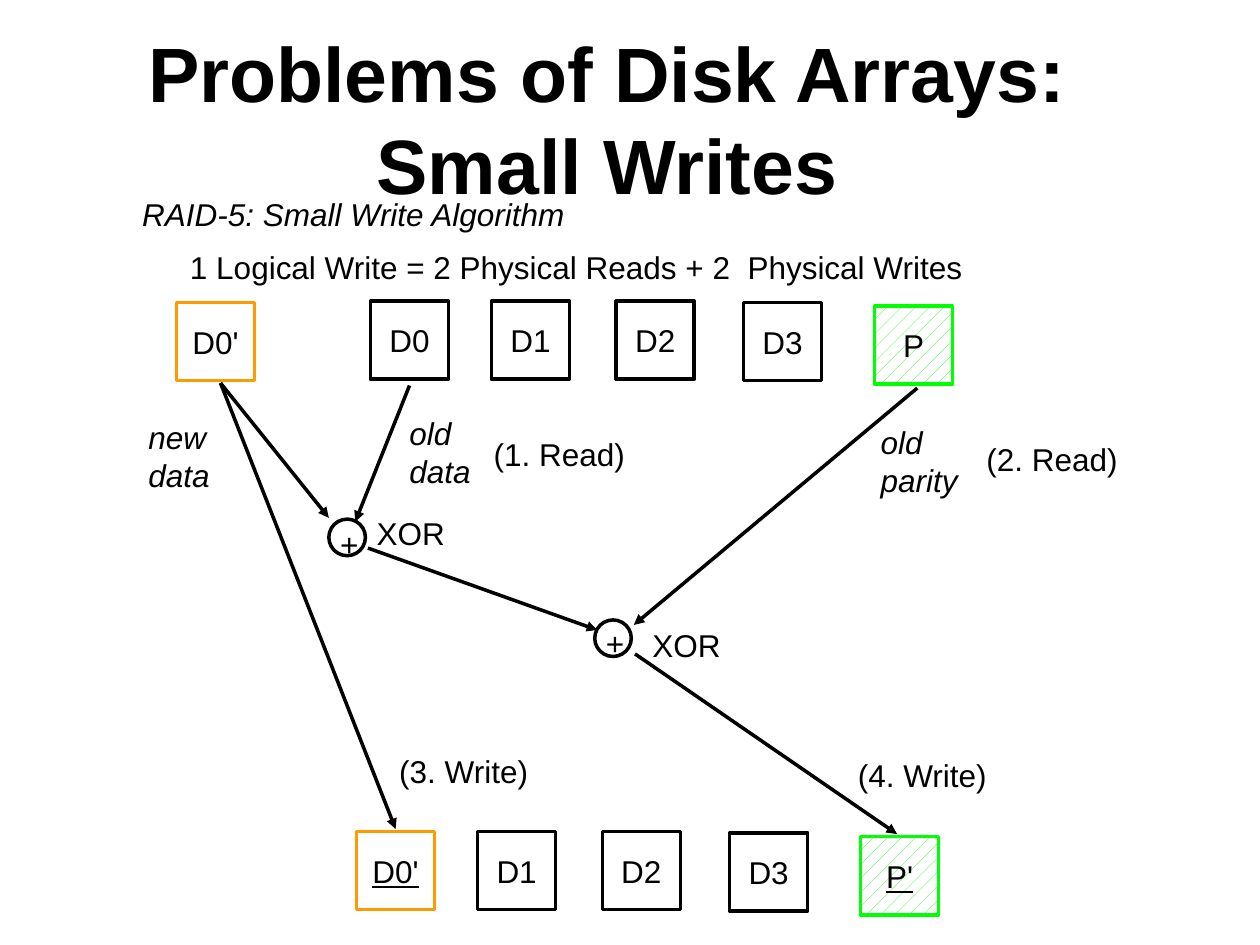
from dataclasses import dataclass
from lxml import etree
from pptx import Presentation
from pptx.dml.color import RGBColor
from pptx.enum.dml import MSO_PATTERN
from pptx.enum.shapes import MSO_CONNECTOR, MSO_SHAPE
from pptx.enum.text import MSO_ANCHOR, MSO_AUTO_SIZE, PP_ALIGN
from pptx.oxml.ns import qn
from pptx.util import Inches, Pt

RECT, OVAL = MSO_SHAPE.RECTANGLE, MSO_SHAPE.OVAL
LINE = MSO_CONNECTOR.STRAIGHT
HATCH = MSO_PATTERN.PERCENT_10
MIDDLE, TOP = MSO_ANCHOR.MIDDLE, MSO_ANCHOR.TOP
CENTER, LEFT = PP_ALIGN.CENTER, PP_ALIGN.LEFT
FIT, FIXED = MSO_AUTO_SIZE.SHAPE_TO_FIT_TEXT, MSO_AUTO_SIZE.NONE


@dataclass(frozen=True)
class Theme:
    font: str = "Arial"
    title: int = 44
    body: int = 18
    line: int = 2
    black: RGBColor = RGBColor(0, 0, 0)
    white: RGBColor = RGBColor(255, 255, 255)
    orange: RGBColor = RGBColor(0xFE, 0x9B, 0x03)
    green: RGBColor = RGBColor(0, 255, 0)


theme = Theme()


def write(shape, text, frame, align=LEFT, **style):
    """Put text in a shape and format its frame and paragraphs."""
    box = shape.text_frame
    box.text = text
    for key, value in frame.items():
        setattr(box, key, value)
    look = {"name": theme.font, "size": Pt(theme.body), **style}
    for para in box.paragraphs:
        para.alignment = align
        for key, value in look.items():
            setattr(para.font, key, value)
        para.font.color.rgb = theme.black


def draw(kind, x, y, size, color):
    """Add an outlined square or circle."""
    shape = shapes.add_shape(kind, Inches(x), Inches(y), Inches(size), Inches(size))
    shape.shadow.inherit = False
    shape.fill.background()
    shape.line.color.rgb = color
    shape.line.width = Pt(theme.line)
    return shape


deck = Presentation()
deck.slide_width, deck.slide_height = Inches(10), Inches(7.5)
slide = deck.slides.add_slide(deck.slide_layouts[5])
shapes = slide.shapes

# Title
title = shapes.title
title.left, title.top = Inches(0.39), Inches(0.53)
title.width, title.height = Inches(8.86), Inches(0.81)
frame = {"word_wrap": True, "auto_size": FIXED, "vertical_anchor": MIDDLE}
write(title, "Problems of Disk Arrays: Small Writes", frame, CENTER,
      size=Pt(theme.title), bold=True)

# Disk blocks: the lower row repeats the upper one, shifted
row = [(2.94, 2.39), (3.9, 2.39), (4.89, 2.39), (5.9, 2.4), (6.94, 2.43)]
black, orange, green = theme.black, theme.orange, theme.green
old = zip(row, ["D0", "D1", "D2", "D3", "P"], [black] * 4 + [green])
new = zip(row, ["D0'", "D1", "D2", "D3", "P'"], [orange] + [black] * 3 + [green])
disks = [(x, y, name, color, False) for (x, y), name, color in old]
disks.append((1.4, 2.4, "D0'", orange, False))
disks += [(x - 0.11, y + 4.21, name, color, name.endswith("'"))
          for (x, y), name, color in new]
frame = {"word_wrap": False, "vertical_anchor": MIDDLE}
for x, y, name, color, under in disks:
    disk = draw(RECT, x, y, 0.62, color)
    if color == green:
        disk.fill.patterned()
        disk.fill.pattern = HATCH
        disk.fill.fore_color.rgb = green
        disk.fill.back_color.rgb = theme.white
    write(disk, name, frame, CENTER, underline=under)

# XOR gates
for x, y in [(2.61, 4.12), (4.72, 4.92)]:
    draw(OVAL, x, y, 0.29, black)

# Data flow arrows
flows = [
    (1.75, 3.04, 2.61, 4.11),
    (3.25, 3.06, 2.82, 4.14),
    (2.92, 4.35, 4.74, 5),
    (7.28, 3.08, 5.03, 4.96),
    (5.04, 5.19, 7.12, 6.62),
    (1.75, 3.04, 3.14, 6.58),
]
for ends in flows:
    arrow = shapes.add_connector(LINE, *map(Inches, ends))
    arrow.line.color.rgb = black
    arrow.line.width = Pt(theme.line)
    etree.SubElement(arrow.line._get_or_add_ln(), qn("a:tailEnd"), type="triangle")
    etree.SubElement(arrow._element.spPr, qn("a:effectLst"))

# Labels: left, top, width, height, text, italic
labels = [
    (2.6, 4.12, 0.35, 0.4, "+", False),
    (4.71, 4.9, 0.35, 0.4, "+", False),
    (1.08, 3.27, 0.72, 0.7, "new\ndata", True),
    (3.15, 3.24, 0.72, 0.7, "old\ndata", True),
    (6.89, 3.31, 0.89, 0.7, "old\nparity", True),
    (5.08, 4.92, 0.75, 0.4, "XOR", False),
    (2.89, 4.03, 0.75, 0.4, "XOR", False),
    (3.82, 3.4, 1.27, 0.4, "(1. Read)", False),
    (7.73, 3.44, 1.27, 0.4, "(2. Read)", False),
    (3.07, 5.92, 1.28, 0.4, "(3. Write)", False),
    (6.71, 5.95, 1.28, 0.4, "(4. Write)", False),
    (1.03, 1.5, 3.82, 0.4, "RAID-5: Small Write Algorithm", True),
    (1.41, 1.92, 6.77, 0.4,
     "1 Logical Write = 2 Physical Reads + 2  Physical Writes", False),
]
frame = {"word_wrap": False, "auto_size": FIT, "vertical_anchor": TOP}
for *place, text, slant in labels:
    label = shapes.add_textbox(*map(Inches, place))
    write(label, text, frame, italic=slant)

deck.save("out.pptx")
